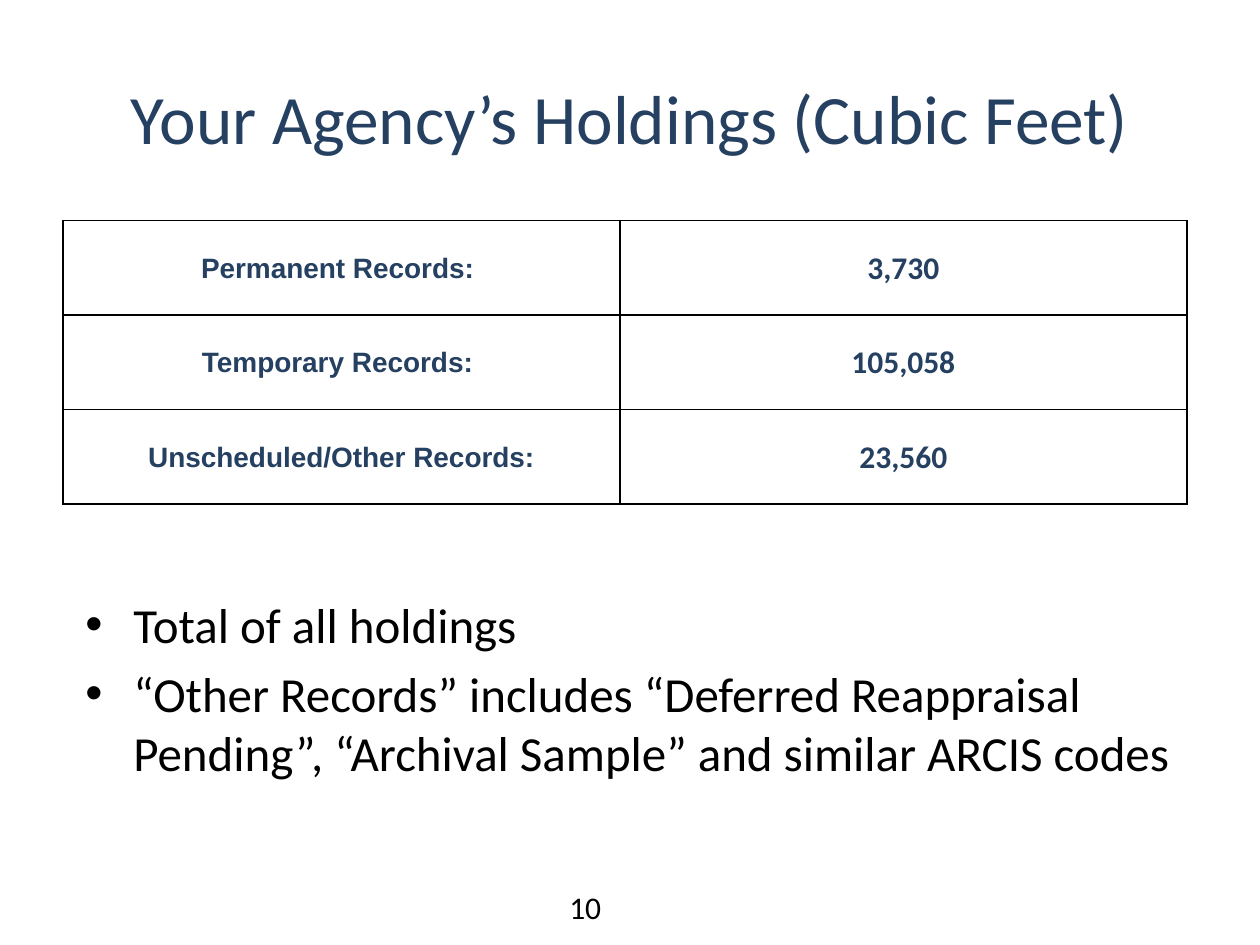
"""Build the agency holdings slide: title, records table, notes and page number."""
from dataclasses import dataclass

from lxml import etree
from pptx import Presentation
from pptx.dml.color import RGBColor
from pptx.enum import text as t
from pptx.oxml import ns
from pptx.util import Inches, Pt

COLORS = {"navy": "254061", "black": "000000", "white": "FFFFFF"}


@dataclass
class Holding:
    label: str
    cubic_feet: str


HOLDINGS = [
    Holding("Permanent Records: ", "3,730"),
    Holding("Temporary Records: ", "105,058"),
    Holding("Unscheduled/Other Records:", "23,560"),
]
NOTES = [
    "Total of all holdings",
    "“Other Records” includes “Deferred Reappraisal Pending”, “Archival Sample” and similar ARCIS codes",
]


def write(p, text: str, size: float, color: str = "black", font: str = "Calibri",
          bold: bool = False, align=t.PP_ALIGN.LEFT) -> None:
    p.alignment = align
    r = p.add_run()
    r.text = text
    r.font.name, r.font.size, r.font.bold = font, Pt(size), bold
    r.font.color.rgb = RGBColor.from_string(COLORS[color])


def add_bullet(p, indent: float) -> None:
    pPr = p._p.get_or_add_pPr()
    pPr.set("marL", str(Inches(indent)))
    pPr.set("indent", str(-Inches(indent)))
    etree.SubElement(pPr, ns.qn("a:buFont"), typeface="Arial")
    etree.SubElement(pPr, ns.qn("a:buChar"), char="•")


def add_borders(cell, width: float) -> None:
    tcPr = cell._tc.get_or_add_tcPr()
    for i, side in enumerate(("lnL", "lnR", "lnT", "lnB")):
        ln = etree.Element(ns.qn(f"a:{side}"), w=str(Pt(width)))
        fill = etree.SubElement(ln, ns.qn("a:solidFill"))
        etree.SubElement(fill, ns.qn("a:srgbClr"), val=COLORS["black"])
        tcPr.insert(i, ln)


def fill_cell(cell, text: str, size: float, font: str) -> None:
    cell.vertical_anchor = t.MSO_ANCHOR.MIDDLE
    cell.margin_left = cell.margin_right = cell.margin_top = Inches(0.01)
    cell.margin_bottom = 0
    cell.fill.solid()
    cell.fill.fore_color.rgb = RGBColor.from_string(COLORS["white"])
    write(cell.text_frame.paragraphs[0], text, size, "navy", font, True, t.PP_ALIGN.CENTER)
    add_borders(cell, 1)


def add_title(s, text: str) -> None:
    sp = s.shapes.title
    sp.left, sp.top, sp.width, sp.height = map(Inches, (0.5, 0.3, 9, 1.25))
    sp.text_frame.vertical_anchor = t.MSO_ANCHOR.MIDDLE
    write(sp.text_frame.paragraphs[0], text, 39.6, "navy", align=t.PP_ALIGN.CENTER)


def add_holdings(s, holdings: list[Holding]) -> None:
    box = map(Inches, (0.5, 1.75, 8.92, 0.75 * len(holdings)))
    table = s.shapes.add_table(len(holdings), 2, *box).table
    table.first_row = table.horz_banding = False
    for column, width in zip(table.columns, (4.42, 4.5)):
        column.width = Inches(width)
    for i, holding in enumerate(holdings):
        fill_cell(table.cell(i, 0), holding.label, 16, "Arial")
        fill_cell(table.cell(i, 1), holding.cubic_feet, 18, "Calibri")


def add_notes(s, notes: list[str]) -> None:
    tf = s.shapes.add_textbox(*map(Inches, (0.58, 4.67, 8.92, 2.03))).text_frame
    tf.word_wrap = True
    for i, note in enumerate(notes):
        p = tf.add_paragraph() if i else tf.paragraphs[0]
        p.space_before = Pt(5.6)
        add_bullet(p, 0.38)
        write(p, note, 28)


def add_page_number(s, number: str) -> None:
    tf = s.shapes.add_textbox(*map(Inches, (4.42, 7, 0.5, 0.4))).text_frame
    tf.word_wrap = False
    write(tf.paragraphs[0], number, 18)


def main() -> None:
    prs = Presentation()
    prs.slide_width, prs.slide_height = Inches(10), Inches(7.5)
    s = prs.slides.add_slide(prs.slide_layouts[5])
    add_page_number(s, "10")
    add_title(s, "Your Agency’s Holdings (Cubic Feet)")
    add_holdings(s, HOLDINGS)
    add_notes(s, NOTES)
    prs.save("out.pptx")


if __name__ == "__main__":
    main()
